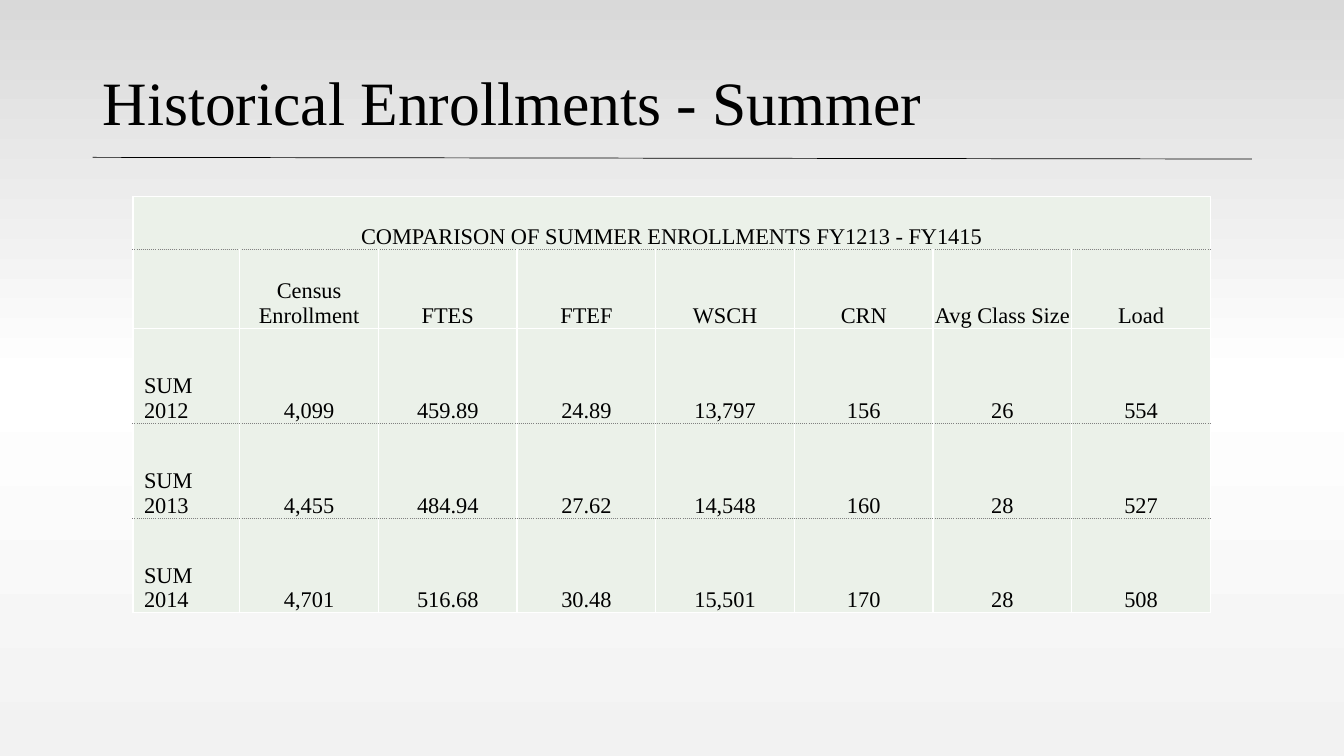
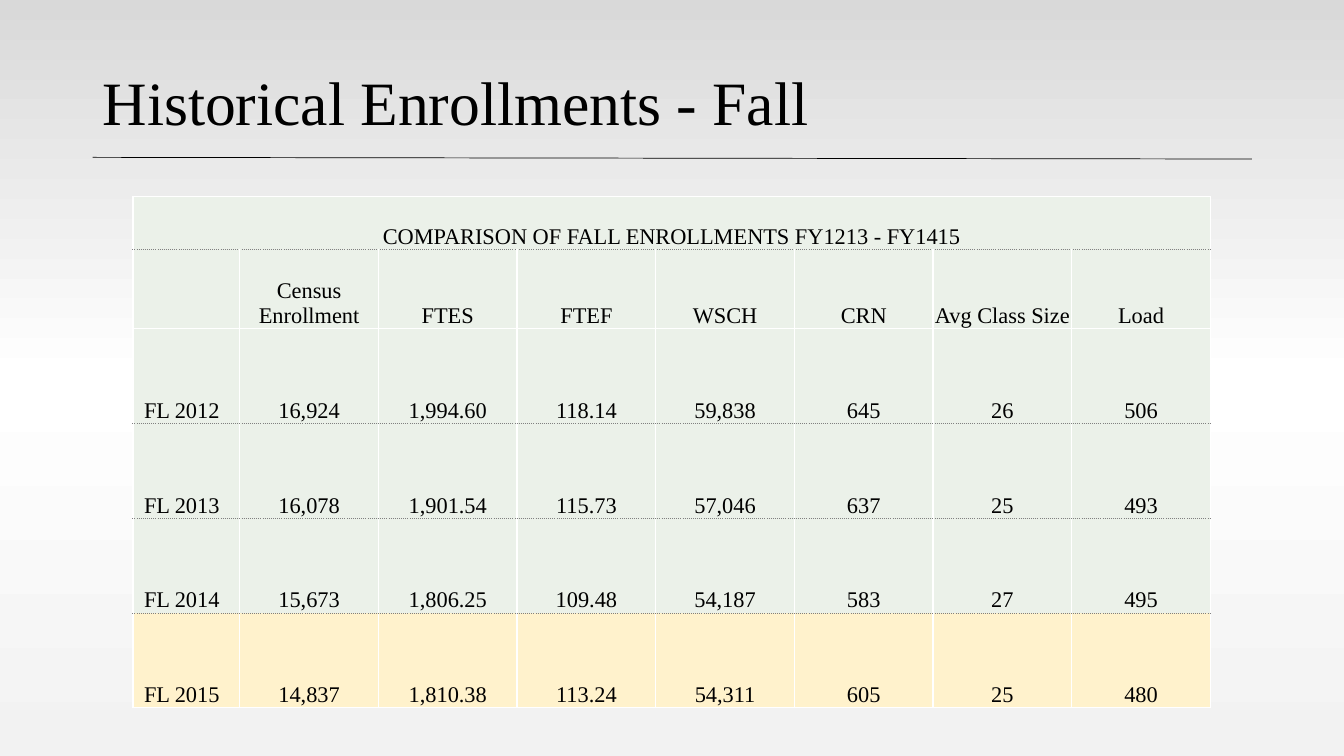
import copy
from dataclasses import dataclass

import lxml.etree
import pptx
import pptx.dml.color
import pptx.enum.shapes
import pptx.enum.text
import pptx.oxml
import pptx.oxml.ns
import pptx.util

Pt = pptx.util.Pt
RGB = pptx.dml.color.RGBColor.from_string
ALIGN = pptx.enum.text.PP_ALIGN
ANCHOR = pptx.enum.text.MSO_ANCHOR
qn = pptx.oxml.ns.qn


# Colours, type sizes and border styles
@dataclass(frozen=True)
class Theme:
    font: str = "Times New Roman"
    title_size: float = 44
    table_size: float = 16
    text: str = "000000"
    row: str = "EBF1E9"
    latest_row: str = "FFF2CC"
    background: tuple = ((0, "D9D9D9"), (0.5, "FFFFFF"), (1, "F2F2F2"))
    solid: tuple = ("FFFFFF", 1, "solid")
    dotted: tuple = ("808080", 0.25, "sysDot")


# Table grid, in points
LABEL_W, VALUE_W = 76.3, 99.05
TITLE_H, HEADER_H, DATA_H = 37.6, 56.4, 67.8
HEADERS = ["", "Census Enrollment", "FTES", "FTEF", "WSCH", "CRN", "Avg Class Size", "Load"]

SUMMER = [
    ["SUM 2012", "4,099", "459.89", "24.89", "13,797", "156", "26", "554"],
    ["SUM 2013", "4,455", "484.94", "27.62", "14,548", "160", "28", "527"],
    ["SUM 2014", "4,701", "516.68", "30.48", "15,501", "170", "28", "508"],
]
FALL = [
    ["FL 2012", "16,924", "1,994.60", "118.14", "59,838", "645", "26", "506"],
    ["FL 2013", "16,078", "1,901.54", "115.73", "57,046", "637", "25", "493"],
    ["FL 2014", "15,673", "1,806.25", "109.48", "54,187", "583", "27", "495"],
    ["FL 2015", "14,837", "1,810.38", "113.24", "54,311", "605", "25", "480"],
]


def apply(obj, values):
    for name, value in values.items():
        setattr(obj, name, value)


class Deck:
    def __init__(self, theme):
        self.theme = theme
        self.prs = pptx.Presentation()
        apply(self.prs, {"slide_width": Pt(960), "slide_height": Pt(540)})
        self.s = None

    # Slide with gradient background, title and rule
    def slide(self, title):
        self.s = self.prs.slides.add_slide(self.prs.slide_layouts[6])
        self.background()
        self.rule()
        self.title(title)

    def background(self):
        fill = self.s.background.fill
        fill.gradient()
        fill.gradient_angle = 270
        stops = self.s.background._cSld.find(".//" + qn("a:gsLst"))
        stops.insert(1, copy.deepcopy(stops[0]))
        for stop, (position, color) in zip(fill.gradient_stops, self.theme.background):
            stop.position = position
            stop.color.rgb = RGB(color)

    def rule(self):
        sp = self.s.shapes.add_connector(
            pptx.enum.shapes.MSO_CONNECTOR.STRAIGHT,
            Pt(66.2), Pt(112.4), Pt(894.2), Pt(113.6))
        sp.line.width = Pt(0.5)
        sp.line.color.rgb = RGB(self.theme.text)
        lxml.etree.SubElement(sp._element.spPr, qn("a:effectLst"))

    def title(self, text):
        sp = self.s.shapes.add_textbox(Pt(66.2), Pt(28.8), Pt(828), Pt(92.9))
        tf = sp.text_frame
        apply(tf, {"word_wrap": True, "vertical_anchor": ANCHOR.MIDDLE})
        self.text(tf.paragraphs[0], text, self.theme.title_size, {"line_spacing": 0.9})

    def text(self, p, text, size, layout):
        apply(p, layout)
        r = p.add_run()
        r.text = text
        apply(r.font, {"name": self.theme.font, "size": Pt(size)})
        r.font.color.rgb = RGB(self.theme.text)

    # Comparison table: caption row, header row, one row per year
    def table(self, caption, data, latest=None):
        rows = [[caption] + [""] * (len(HEADERS) - 1), HEADERS] + data
        heights = [TITLE_H, HEADER_H] + [DATA_H] * len(data)
        widths = [LABEL_W] + [VALUE_W] * (len(HEADERS) - 1)
        table = self.s.shapes.add_table(
            len(rows), len(widths), Pt(95), Pt(140.4),
            Pt(sum(widths)), Pt(sum(heights))).table
        apply(table, {"first_row": False, "horz_banding": False})
        for column, width in zip(table.columns, widths):
            column.width = Pt(width)
        for row, height in zip(table.rows, heights):
            row.height = Pt(height)
        table.cell(0, 0).merge(table.cell(0, len(widths) - 1))

        # Dotted lines between rows, solid at the edges and under the headers
        solid_edges = {0, 2, len(rows)}
        edges = [self.theme.solid if i in solid_edges else self.theme.dotted
                 for i in range(len(rows) + 1)]
        for i, values in enumerate(rows):
            fill = self.theme.latest_row if values[0] == latest else self.theme.row
            for j, text in enumerate(values):
                is_label = i > 1 and j == 0
                self.cell(table.cell(i, j), text, fill, edges[i], edges[i + 1], is_label)

    def cell(self, cell, text, fill, top, bottom, is_label):
        apply(cell, {"vertical_anchor": ANCHOR.BOTTOM, "margin_left": Pt(0.7),
                     "margin_right": Pt(0.7), "margin_top": Pt(0.7), "margin_bottom": 0})
        solid = self.theme.solid
        for side, style in (("L", solid), ("R", solid), ("T", top), ("B", bottom)):
            self.border(cell, side, *style)
        cell.fill.solid()
        cell.fill.fore_color.rgb = RGB(fill)
        if text:
            p = cell.text_frame.paragraphs[0]
            align = ALIGN.LEFT if is_label else ALIGN.CENTER
            self.text(p, text, self.theme.table_size, {"alignment": align})
            if is_label:
                p._p.get_or_add_pPr().set("marL", str(Pt(7.2)))

    def border(self, cell, side, color, width, dash):
        tcPr = cell._tc.get_or_add_tcPr()
        ln = lxml.etree.SubElement(tcPr, qn("a:ln" + side), w=str(Pt(width)))
        fill = lxml.etree.SubElement(ln, qn("a:solidFill"))
        lxml.etree.SubElement(fill, qn("a:srgbClr"), val=color)
        lxml.etree.SubElement(ln, qn("a:prstDash"), val=dash)


def main():
    deck = Deck(Theme())

    # Summer
    deck.slide("Historical Enrollments - Summer")
    deck.table("COMPARISON OF SUMMER ENROLLMENTS FY1213 - FY1415", SUMMER)

    # Fall
    deck.slide("Historical Enrollments - Fall")
    deck.table("COMPARISON OF FALL ENROLLMENTS FY1213 - FY1415", FALL, latest="FL 2015")

    deck.prs.save("out.pptx")


if __name__ == "__main__":
    main()
